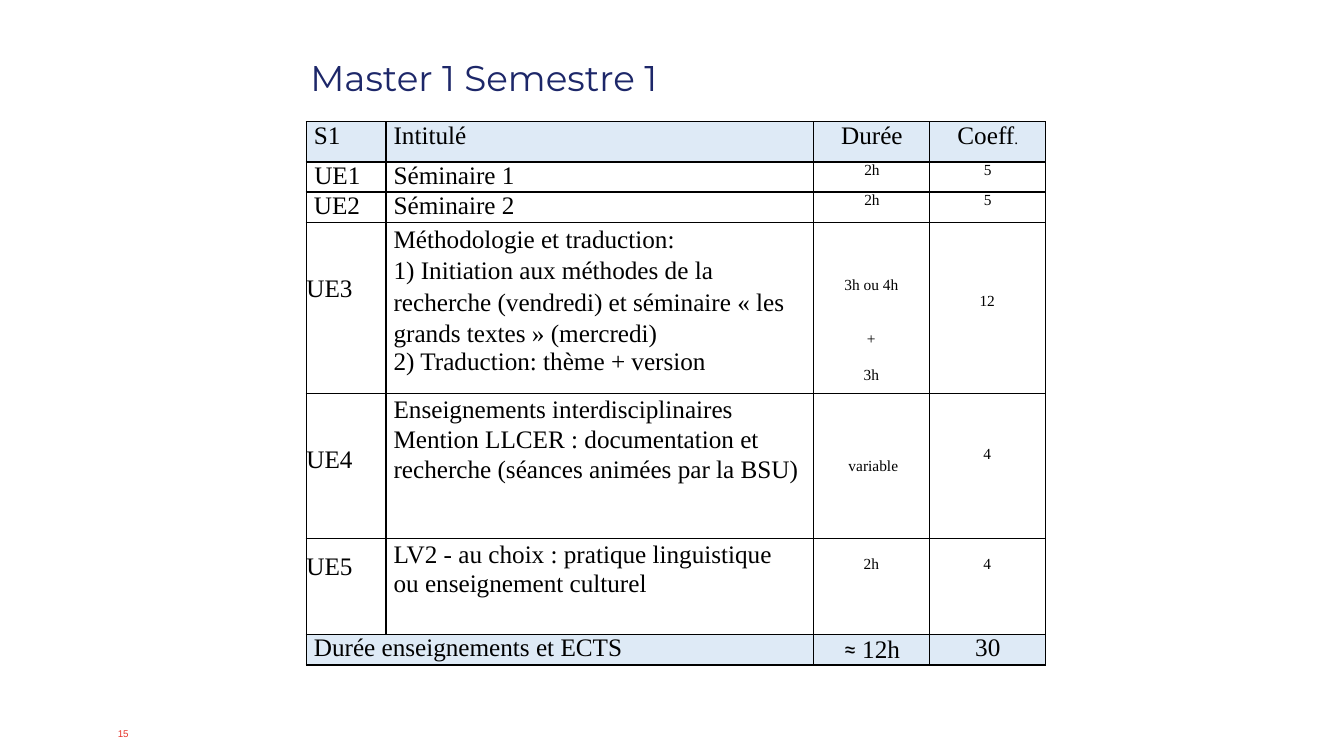
from dataclasses import dataclass
from typing import Any

from lxml.etree import SubElement
from pptx import Presentation
from pptx.dml.color import RGBColor
from pptx.enum.text import MSO_ANCHOR, PP_ALIGN
from pptx.oxml.ns import qn
from pptx.util import Cm, Pt


@dataclass(frozen=True)
class Theme:
    navy: str = "1D2769"
    red: str = "E6332A"
    black: str = "000000"
    pale_blue: str = "DEEAF6"
    title_font: str = "Montserrat"
    body_font: str = "Times New Roman"
    symbol_font: str = "Calibri"
    number_font: str = "Arial"
    title_size: float = 25.5
    body_size: float = 18
    detail_size: float = 11
    number_size: float = 7
    border_width: float = 1


THEME = Theme()


@dataclass(frozen=True)
class Span:
    text: str
    size: float = THEME.body_size
    font: str = THEME.body_font
    color: str = THEME.black


@dataclass(frozen=True)
class Line:
    spans: tuple[Span, ...]
    before: float = 0
    spacing: Any = None


@dataclass(frozen=True)
class Entry:
    """Content of one cell; left and top are its insets in cm."""
    lines: tuple[Line, ...]
    left: float = 0
    top: float = 0
    align: PP_ALIGN = PP_ALIGN.LEFT


@dataclass(frozen=True)
class Row:
    height: float
    entries: tuple[Entry | None, ...]
    shaded: bool = False


def body(text: str, before: float = 0, spacing: Any = None) -> Line:
    return Line((Span(text),), before, spacing)


def detail(text: str, before: float = 0) -> Line:
    return Line((Span(text, THEME.detail_size),), before)


def unit(text: str, top: float = 0, left: float = 0) -> Entry:
    return Entry((body(text),), left, top)


def heading(*lines: Line) -> Entry:
    return Entry(lines, left=0.19)


def centred(*lines: Line, top: float = 0, left: float = 0.03) -> Entry:
    return Entry(lines, left, top, PP_ALIGN.CENTER)


LOOSE = 1.12
GAP = 0.4
COLUMN_WIDTHS = (2.01, 10.77, 2.92, 2.92)
COURSES = (
    Row(1.01, (
        unit("S1", left=0.19),
        heading(body("Intitulé")),
        centred(body("Durée")),
        centred(Line((Span("Coeff"), Span(".", THEME.detail_size)))),
    ), shaded=True),
    Row(0.76, (
        unit("UE1", left=0.2),
        heading(body("Séminaire 1")),
        centred(detail("2h")),
        centred(detail("5")),
    )),
    Row(0.76, (
        unit("UE2", left=0.19),
        heading(body("Séminaire 2")),
        centred(detail("2h")),
        centred(detail("5")),
    )),
    Row(4.32, (
        unit("UE3", top=1.32),
        heading(
            body("Méthodologie et traduction:", spacing=LOOSE),
            body("1) Initiation aux méthodes de la recherche (vendredi) et "
                 "séminaire « les grands textes » (mercredi)", GAP, LOOSE),
            body("2) Traduction: thème + version", GAP),
        ),
        centred(detail("3h ou 4h"), detail("+", 26.5), detail("3h", 13.5),
                top=1.37, left=0),
        centred(detail("12"), top=1.77, left=0),
    )),
    Row(3.64, (
        unit("UE4", top=1.32),
        heading(body("Enseignements interdisciplinaires Mention LLCER : "
                     "documentation et recherche (séances animées par la BSU)",
                     spacing=Pt(21.6))),
        centred(detail("variable"), top=1.62, left=0.1),
        centred(detail("4"), top=1.32, left=0),
    )),
    Row(2.42, (
        unit("UE5", top=0.37),
        heading(
            body("LV2 - au choix : pratique linguistique", spacing=LOOSE),
            body("ou enseignement culturel", GAP),
        ),
        centred(detail("2h"), top=0.45, left=0),
        centred(detail("4"), top=0.45, left=0),
    )),
    Row(0.76, (
        unit("Durée enseignements et ECTS", left=0.19),
        None,
        centred(Line((Span("≈ ", font=THEME.symbol_font), Span("12h")))),
        centred(body("30")),
    ), shaded=True),
)


def apply(target: Any, formats: dict[str, Any]) -> None:
    for name, value in formats.items():
        setattr(target, name, value)


def write(frame: Any, lines: tuple[Line, ...], align: PP_ALIGN) -> None:
    for index, line in enumerate(lines):
        paragraph = frame.add_paragraph() if index else frame.paragraphs[0]
        apply(paragraph, {"alignment": align, "line_spacing": line.spacing,
                          "space_before": Pt(line.before), "space_after": Pt(0)})
        for span in line.spans:
            run = paragraph.add_run()
            run.text = span.text
            apply(run.font, {"size": Pt(span.size), "name": span.font})
            run.font.color.rgb = RGBColor.from_string(span.color)


def add_borders(cell: Any) -> None:
    properties = cell._tc.get_or_add_tcPr()
    for side in ("a:lnL", "a:lnR", "a:lnT", "a:lnB"):
        border = SubElement(properties, qn(side), w=str(Pt(THEME.border_width)))
        fill = SubElement(border, qn("a:solidFill"))
        SubElement(fill, qn("a:srgbClr"), val=THEME.black)


def add_course_table(slide: Any) -> None:
    table = slide.shapes.add_table(
        len(COURSES), len(COLUMN_WIDTHS), Cm(7.72), Cm(3.07),
        Cm(sum(COLUMN_WIDTHS)), Cm(sum(row.height for row in COURSES))).table
    apply(table, {"first_row": False, "horz_banding": False})
    for column, width in zip(table.columns, COLUMN_WIDTHS):
        column.width = Cm(width)
    for table_row, row in zip(table.rows, COURSES):
        table_row.height = Cm(row.height)
        for cell, entry in zip(table_row.cells, row.entries):
            add_borders(cell)
            if row.shaded:
                cell.fill.solid()
                cell.fill.fore_color.rgb = RGBColor.from_string(THEME.pale_blue)
            else:
                cell.fill.background()
            if entry:
                apply(cell, {"margin_left": Cm(entry.left), "margin_right": 0,
                             "margin_top": Cm(entry.top), "margin_bottom": 0})
                write(cell.text_frame, entry.lines, entry.align)
    total = len(COURSES) - 1
    table.cell(total, 0).merge(table.cell(total, 1))


def set_label(label: Any, box: tuple[float, ...], line: Line, wrap: bool) -> None:
    """Place a bottom-anchored single line; box is left, top, width, height in cm."""
    apply(label, dict(zip(("left", "top", "width", "height"), map(Cm, box))))
    apply(label.text_frame, {"margin_left": Cm(0.1), "margin_right": Cm(0.1),
                             "margin_top": 0, "margin_bottom": 0,
                             "word_wrap": wrap,
                             "vertical_anchor": MSO_ANCHOR.BOTTOM})
    write(label.text_frame, (line,), PP_ALIGN.LEFT)


def main() -> None:
    deck = Presentation()
    apply(deck, {"slide_width": Cm(33.87), "slide_height": Cm(19.05)})
    slide = deck.slides.add_slide(deck.slide_layouts[5])
    heading_span = Span("Master 1 Semestre 1", THEME.title_size,
                        THEME.title_font, THEME.navy)
    set_label(slide.shapes.title, (7.72, 1.32, 19, 1.19),
              Line((heading_span,), spacing=0.9), True)
    add_course_table(slide)
    page_span = Span("15", THEME.number_size, THEME.number_font, THEME.red)
    page_number = slide.shapes.add_textbox(0, 0, 0, 0)
    set_label(page_number, (2.87, 18.34, 0.64, 0.3), Line((page_span,)), False)
    deck.save("out.pptx")


if __name__ == "__main__":
    main()
